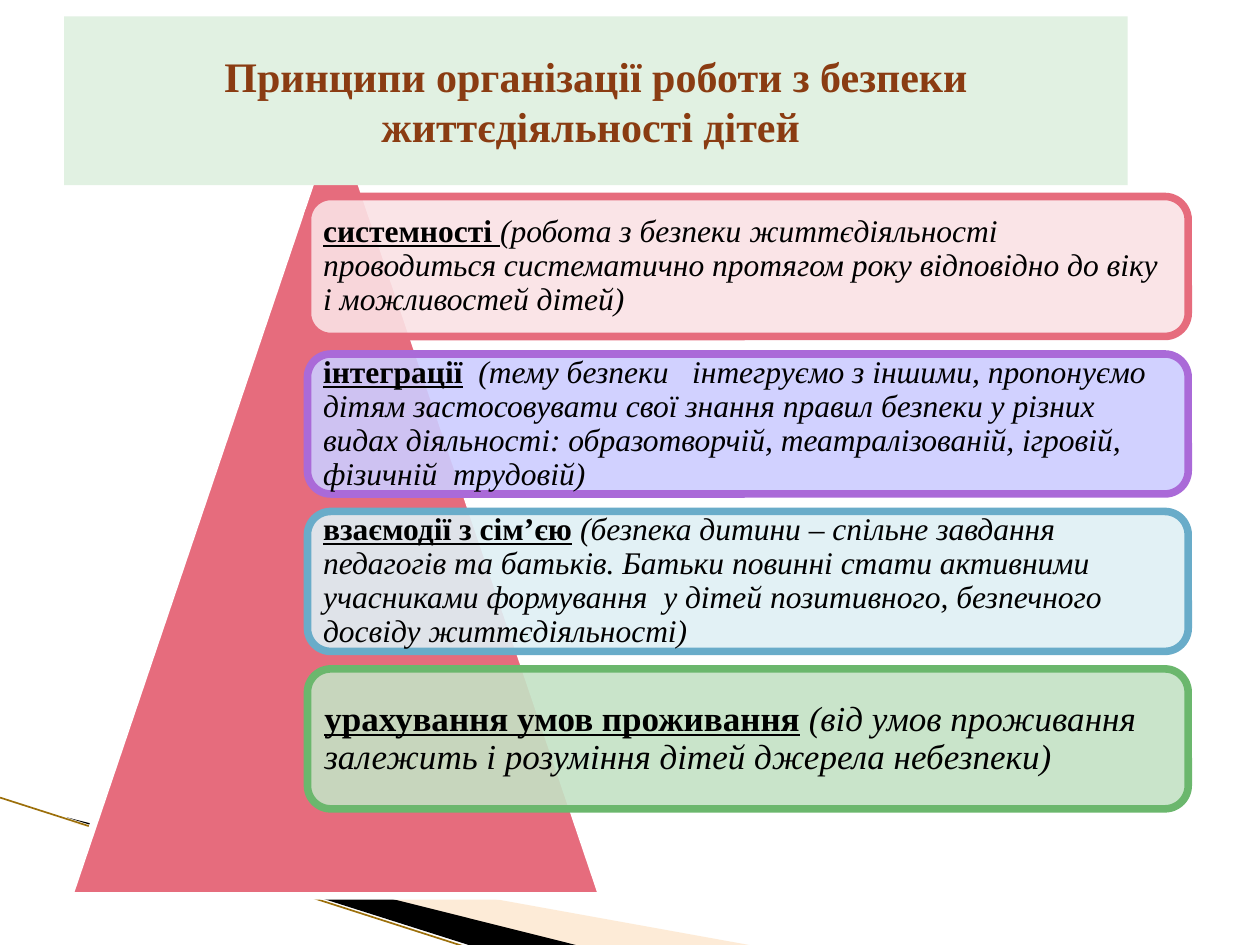
from dataclasses import dataclass

from lxml import etree
from pptx import Presentation
from pptx.dml.color import RGBColor
from pptx.enum.shapes import MSO_CONNECTOR, MSO_SHAPE
from pptx.enum.text import MSO_ANCHOR, PP_ALIGN
from pptx.oxml.ns import qn
from pptx.util import Inches, Pt

STRAIGHT = MSO_CONNECTOR.STRAIGHT
TRIANGLE, ROUNDED = MSO_SHAPE.ISOSCELES_TRIANGLE, MSO_SHAPE.ROUNDED_RECTANGLE
MIDDLE = MSO_ANCHOR.MIDDLE
LEFT, CENTER = PP_ALIGN.LEFT, PP_ALIGN.CENTER


@dataclass(frozen=True)
class Theme:
    """Colours, font and sizes of the slide."""
    font: str = "Times New Roman"
    title_size: int = 24
    text: str = "000000"
    title: str = "8A3C12"
    title_fill: str = "E1F1E2"
    pyramid: str = "E66C7D"
    paper: str = "FFFFFF"
    wedge: str = "FCCF9B"
    shade: str = "000000"
    edge: str = "9C6F0A"
    border: float = 4.33
    hairline: float = 0.95


THEME = Theme()
WIDTH, HEIGHT = 10, 7.5
TITLE_BOX = (0.51, 0.13, 8.44, 1.34)
PYRAMID_BOX = (0.55, 0.86, 4.23, 6.25)
CARDS_BOX = (2.44, 1.56, 6.99, 4.86)
CARD_SHARE = 8 / 9

TITLE = "Принципи організації роботи з безпеки життєдіяльності дітей "
CARDS = [
    ("FAE2E5", "E66C7D", 18, 0.07, "системності ", "",
     "(робота з безпеки життєдіяльності проводиться систематично "
     "протягом року відповідно до віку і можливостей дітей)"),
    ("CCCCFF", "AA6AD8", 18, 0.07, "інтеграції", "  ",
     "(тему безпеки   інтегруємо з іншими, пропонуємо дітям "
     "застосовувати свої знання правил безпеки у різних видах діяльності: "
     "образотворчій, театралізованій, ігровій, фізичній  трудовій)"),
    ("DFF0F5", "69ACC9", 18, 0.07, "взаємодії з сім’єю", " ",
     "(безпека дитини – спільне завдання педагогів та батьків. Батьки "
     "повинні стати активними  учасниками формування  у дітей "
     "позитивного, безпечного досвіду життєдіяльності)"),
    ("C4E2C5", "6BB76D", 20, 0.08, "урахування умов проживання", " ",
     "(від умов проживання залежить і розуміння дітей джерела небезпеки)"),
]


def rgb(color):
    """Return a colour object for a hex string."""
    return RGBColor.from_string(color)


def paint(shape, fill, line=None, alpha=100):
    """Set fill, opacity in percent and outline, without a shadow."""
    shape.shadow.inherit = False
    shape.fill.solid()
    shape.fill.fore_color.rgb = rgb(fill)
    if alpha < 100:
        color = shape.fill._xPr.find(qn("a:solidFill"))[0]
        etree.SubElement(color, qn("a:alpha"), val=str(alpha * 1000))
    if line:
        shape.line.color.rgb = rgb(line)
        shape.line.width = Pt(THEME.border)
    else:
        shape.line.fill.background()


def add_run(p, text, size, color, **styles):
    """Append a run with the theme font and the given styles."""
    r = p.add_run()
    r.text = text
    r.font.color.rgb = rgb(color)
    formats = {"name": THEME.font, "size": Pt(size), **styles}
    for name, value in formats.items():
        setattr(r.font, name, value)


def add_wedge(s, points, fill, alpha=100):
    """Draw a closed polygon given as shares of the slide."""
    scaled = [(Inches(x * WIDTH), Inches(y * HEIGHT)) for x, y in points]
    builder = s.shapes.build_freeform(*scaled[0])
    builder.add_line_segments(scaled[1:], close=True)
    paint(builder.convert_to_shape(), fill, alpha=alpha)


def add_corner(s):
    """Draw the decoration of the lower left corner."""
    add_wedge(s, [(0.055, 0.87), (0.595, 1), (0.456, 1)], THEME.wedge, 40)
    add_wedge(s, [(0.053, 0.865), (0.457, 1), (0.372, 1)], THEME.shade)
    edge = s.shapes.add_connector(
        STRAIGHT, 0, Inches(6.33), Inches(3.71), Inches(7.52))
    edge.line.color.rgb = rgb(THEME.edge)
    edge.line.width = Pt(THEME.hairline)
    etree.SubElement(edge._element.spPr, qn("a:effectLst"))


def add_pyramid(s, box):
    """Draw the large triangle behind the cards."""
    paint(s.shapes.add_shape(TRIANGLE, *map(Inches, box)),
          THEME.pyramid, THEME.paper)


def add_card(s, box, card):
    """Draw one principle as a rounded card."""
    fill, line, size, inset, name, gap, detail = card
    shape = s.shapes.add_shape(ROUNDED, *map(Inches, box))
    paint(shape, fill, line, 90)
    tf = shape.text_frame
    tf.word_wrap = True
    tf.vertical_anchor = MIDDLE
    for side in ("left", "top", "right", "bottom"):
        setattr(tf, f"margin_{side}", Inches(inset))
    p = tf.paragraphs[0]
    p.alignment = LEFT
    p.line_spacing = 0.9
    add_run(p, name, size, THEME.text, bold=True, underline=True)
    if gap:
        add_run(p, gap, size, THEME.text)
    add_run(p, detail, size, THEME.text, italic=True)


def add_cards(s, box):
    """Stack the cards at an even pitch within the box."""
    left, top, width, height = box
    pitch = height / (len(CARDS) - 1 + CARD_SHARE)
    for i, card in enumerate(CARDS):
        add_card(s, (left, top + i * pitch, width, pitch * CARD_SHARE), card)


def add_title(s, box):
    """Place the title placeholder in front of the pyramid."""
    title = s.shapes.title
    for name, value in zip(("left", "top", "width", "height"), box):
        setattr(title, name, Inches(value))
    title.fill.solid()
    title.fill.fore_color.rgb = rgb(THEME.title_fill)
    tf = title.text_frame
    tf.word_wrap = True
    tf.vertical_anchor = MIDDLE
    p = tf.paragraphs[0]
    p.alignment = CENTER
    add_run(p, TITLE, THEME.title_size, THEME.title, bold=True)
    title._element.getparent().append(title._element)


def main():
    """Build and save the slide."""
    prs = Presentation()
    prs.slide_width, prs.slide_height = Inches(WIDTH), Inches(HEIGHT)
    s = prs.slides.add_slide(prs.slide_layouts[5])
    add_corner(s)
    add_pyramid(s, PYRAMID_BOX)
    add_cards(s, CARDS_BOX)
    add_title(s, TITLE_BOX)
    prs.save("out.pptx")


if __name__ == "__main__":
    main()
